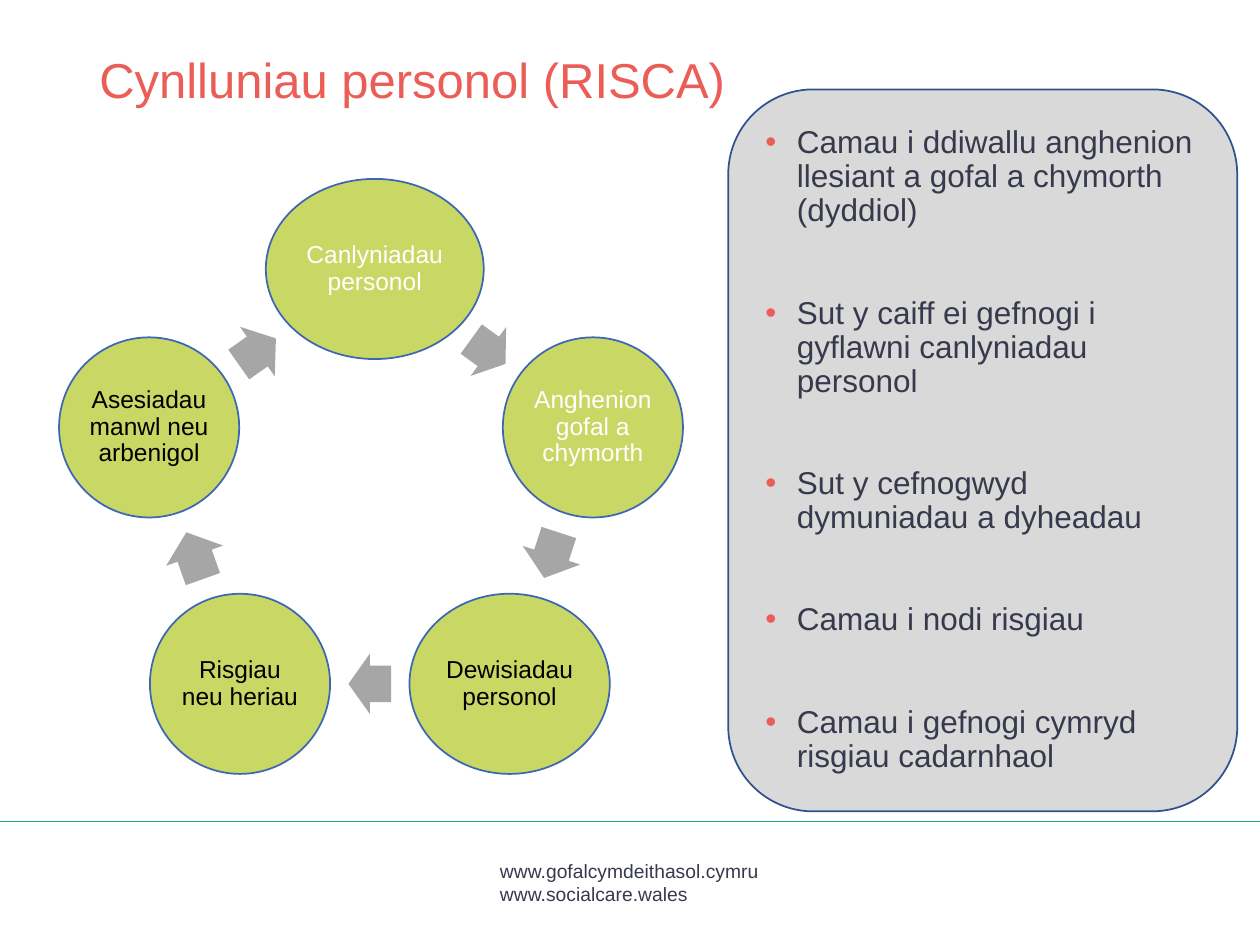
from dataclasses import dataclass
from math import atan2, cos, degrees, hypot, radians, sin

from lxml.etree import SubElement
from pptx import Presentation
from pptx.dml.color import RGBColor
from pptx.enum.shapes import MSO_CONNECTOR, MSO_SHAPE
from pptx.enum.text import MSO_ANCHOR, PP_ALIGN
from pptx.oxml.ns import qn
from pptx.util import Pt

EMU_PER_PX = 9144


@dataclass(frozen=True)
class Theme:
    """Hold the colours, font and type sizes of the slide."""
    font: str = "Arial"
    coral: str = "EB5E57"
    ink: str = "37394C"
    lime: str = "C9D765"
    blue: str = "3E67B2"
    navy: str = "2F528F"
    arrow: str = "A6A6A6"
    panel: str = "D9D9D9"
    rule: str = "16AD85"
    white: str = "FFFFFF"
    black: str = "000000"
    title_size: int = 28
    list_size: int = 18
    node_size: int = 14
    footer_size: int = 11


THEME = Theme()


def px(length):
    """Turn px into EMU."""
    return round(length * EMU_PER_PX)


def colour(value):
    """Turn a hex value into a colour."""
    return RGBColor.from_string(value)


def write(frame, lines, size, ink, align=PP_ALIGN.LEFT, anchor=MSO_ANCHOR.TOP,
          spacing=None, gap=0, inset=None, bullet=None, indent=25):
    """Fill a text frame with one paragraph for each line."""
    frame.word_wrap = True
    frame.vertical_anchor = anchor
    if inset is not None:
        frame.margin_left = frame.margin_right = px(inset)
        frame.margin_top = frame.margin_bottom = px(inset)
    for index, line in enumerate(lines):
        para = frame.paragraphs[0] if index == 0 else frame.add_paragraph()
        para.alignment = align
        para.space_before = Pt(gap if index else 0)
        if spacing:
            para.line_spacing = spacing
        if bullet:
            add_bullet(para, bullet, indent)
        span = para.add_run()
        span.text = line
        span.font.name = THEME.font
        span.font.size = Pt(size)
        span.font.color.rgb = colour(ink)


def add_bullet(para, tint, indent):
    """Give a paragraph a coloured bullet with a hanging indent."""
    properties = para._p.get_or_add_pPr()
    properties.set("marL", str(px(indent)))
    properties.set("indent", str(-px(indent)))
    bullet_colour = SubElement(properties, qn("a:buClr"))
    SubElement(bullet_colour, qn("a:srgbClr"), val=tint)
    SubElement(properties, qn("a:buFont"), typeface=THEME.font)
    SubElement(properties, qn("a:buChar"), char="•")


def add_text(page, box, lines, **style):
    """Place a text box."""
    frame = page.shapes.add_textbox(*map(px, box)).text_frame
    write(frame, lines, **style)


def add_figure(page, kind, box, fill, line=None):
    """Place a filled preset shape, outlined if a line colour is given."""
    figure = page.shapes.add_shape(kind, *map(px, box))
    figure.shadow.inherit = False
    figure.fill.solid()
    figure.fill.fore_color.rgb = colour(fill)
    if line:
        figure.line.color.rgb = colour(line)
        figure.line.width = Pt(1)
    else:
        figure.line.fill.background()
    return figure


def reach(width, height, angle):
    """Return the distance from an ellipse's centre to its edge."""
    return 1 / hypot(2 * cos(angle) / width, 2 * sin(angle) / height)


def add_cycle_arrow(page, start, end):
    """Place a block arrow in the middle of the gap between two nodes."""
    (x, y, width), (end_x, end_y, end_width) = start, end
    node_height, arrow_height, gap_share = 143, 48, 0.54
    angle = atan2(end_y - y, end_x - x)
    near = reach(width, node_height, angle)
    far = hypot(end_x - x, end_y - y) - reach(end_width, node_height, angle)
    length = gap_share * (far - near)
    middle = (near + far) / 2
    box = (x + middle * cos(angle) - length / 2,
           y + middle * sin(angle) - arrow_height / 2, length, arrow_height)
    arrow = add_figure(page, MSO_SHAPE.RIGHT_ARROW, box, THEME.arrow)
    arrow.adjustments[0], arrow.adjustments[1] = 0.6, 0.5
    arrow.rotation = degrees(angle) % 360


def add_cycle(page, box, nodes):
    """Place nodes clockwise round a ring, with an arrow after each."""
    left, top, width, height = box
    node_height, radius = 143, 182
    centre_x, centre_y = left + width / 2, top + node_height / 2 + radius
    places = []
    for index, (label, node_width, ink, shift) in enumerate(nodes):
        angle = radians(360 / len(nodes) * index - 90)
        x = centre_x + radius * cos(angle) + shift
        y = centre_y + radius * sin(angle)
        places.append((x, y, node_width))
        node = add_figure(page, MSO_SHAPE.OVAL,
                          (x - node_width / 2, y - node_height / 2, node_width, node_height),
                          THEME.lime, THEME.blue)
        write(node.text_frame, [label], size=THEME.node_size, ink=ink, spacing=0.9,
              align=PP_ALIGN.CENTER, anchor=MSO_ANCHOR.MIDDLE, inset=2)
    for start, end in zip(places, places[1:] + places[:1]):
        add_cycle_arrow(page, start, end)


def add_panel(page, box, points):
    """Place the rounded panel with its bulleted list."""
    panel = add_figure(page, MSO_SHAPE.ROUNDED_RECTANGLE, box, THEME.panel, THEME.navy)
    write(panel.text_frame, points, size=THEME.list_size, ink=THEME.ink, spacing=0.9,
          gap=39, anchor=MSO_ANCHOR.MIDDLE, bullet=THEME.coral)


def add_footer(page, box, addresses):
    """Place the rule along the top of the box and the addresses below it."""
    left, top, width, height = box
    rule = page.shapes.add_connector(MSO_CONNECTOR.STRAIGHT, px(left), px(top),
                                     px(left + width), px(top))
    rule.line.color.rgb = colour(THEME.rule)
    rule.line.width = Pt(1)
    SubElement(rule._element.spPr, qn("a:effectLst"))
    add_text(page, (left + 387, top + 25, 226, 46), addresses,
             size=THEME.footer_size, ink=THEME.ink)


def main():
    """Build the slide and save it."""
    deck = Presentation()
    deck.slide_width, deck.slide_height = px(1000), px(750)
    page = deck.slides.add_slide(deck.slide_layouts[6])
    add_footer(page, (0, 652, 1000, 98), ["www.gofalcymdeithasol.cymru", "www.socialcare.wales"])
    add_text(page, (69, 40, 546, 113), ["Cynlluniau personol (RISCA)"],
             size=THEME.title_size, ink=THEME.coral, spacing=0.9)
    add_cycle(page, (53, 142, 489, 473), [
        ("Canlyniadau personol", 173, THEME.white, 0),
        ("Anghenion gofal a chymorth", 143, THEME.white, 0),
        ("Dewisiadau personol", 159, THEME.black, 0),
        ("Risgiau neu heriau", 143, THEME.black, 0),
        ("Asesiadau manwl neu arbenigol", 143, THEME.black, -6),
    ])
    add_panel(page, (578, 71, 404, 573), [
        "Camau i ddiwallu anghenion llesiant a gofal a chymorth (dyddiol)",
        "Sut y caiff ei gefnogi i gyflawni canlyniadau personol",
        "Sut y cefnogwyd dymuniadau a dyheadau",
        "Camau i nodi risgiau",
        "Camau i gefnogi cymryd risgiau cadarnhaol",
    ])
    deck.save("out.pptx")


if __name__ == "__main__":
    main()
